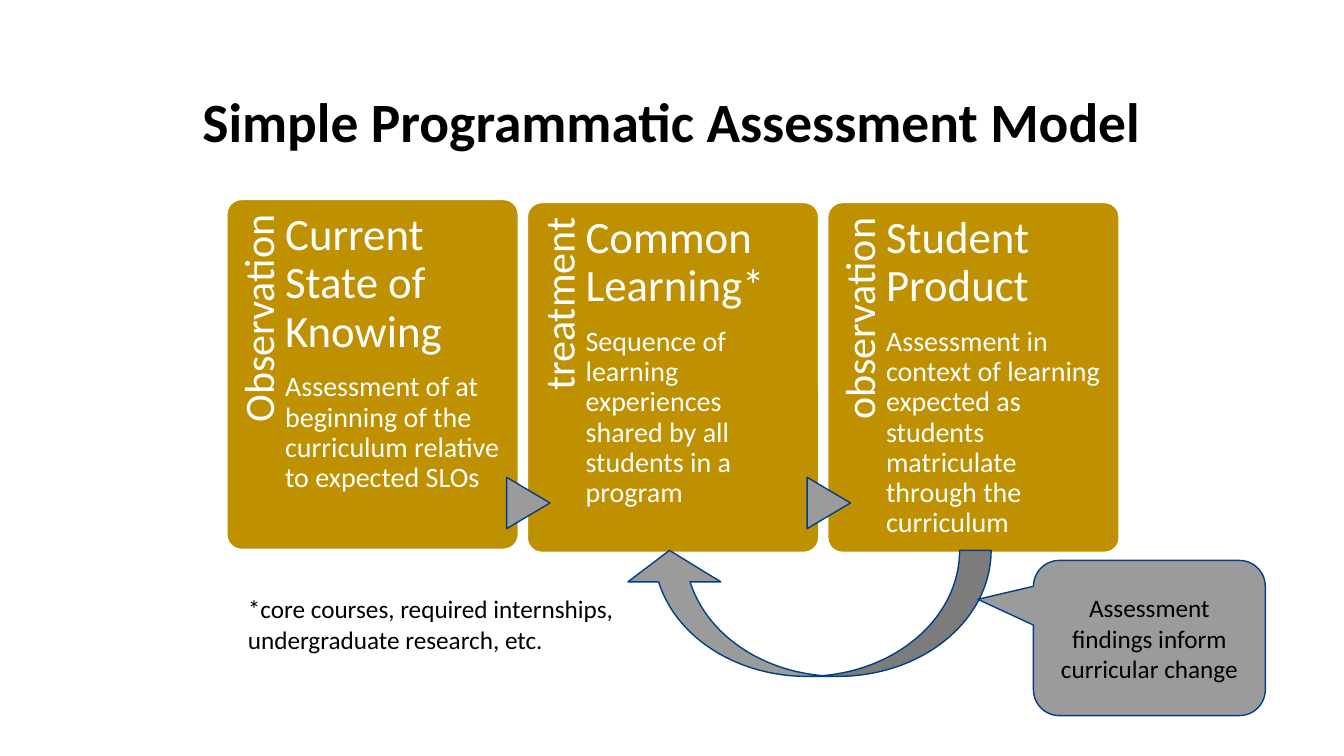
from pptx import Presentation
from pptx.dml.color import RGBColor
from pptx.enum.shapes import MSO_SHAPE as SHAPE
from pptx.enum.text import MSO_ANCHOR as ANCHOR, PP_ALIGN as ALIGN
from pptx.util import Inches, Pt

WHITE = RGBColor(0xFF, 0xFF, 0xFF)
BLACK = RGBColor(0, 0, 0)
GOLD = RGBColor(0xBF, 0x90, 0x00)
GRAY = RGBColor(0x9B, 0x9B, 0x9C)
NAVY = RGBColor(0x00, 0x3F, 0x87)

CARD_W, CARD_H, CARD_PITCH = 2.89, 3.47, 2.98
FIRST_LEFT = 2.25
CARDS = [
    (1.98, "Observation", "Current State of Knowing",
     "Assessment of at beginning of the curriculum relative to expected SLOs"),
    (2.01, "treatment", "Common Learning*",
     "Sequence of learning experiences shared by all students in a program"),
    (2.01, "observation", "Student Product",
     "Assessment in context of learning expected as students matriculate "
     "through the curriculum"),
]


def write(tf, *lines, color=BLACK, bold=None, align=ALIGN.LEFT, spacing=None,
          after=0, margins=(0.1, 0.05, 0.1, 0.05), anchor=ANCHOR.TOP):
    """Fill a text frame with (text, size) lines in one format."""
    tf.word_wrap = True
    tf.vertical_anchor = anchor
    (tf.margin_left, tf.margin_top,
     tf.margin_right, tf.margin_bottom) = map(Inches, margins)
    for i, (text, size) in enumerate(lines):
        p = tf.add_paragraph() if i else tf.paragraphs[0]
        p.alignment = align
        p.line_spacing = spacing
        p.space_before = Pt(0)
        p.space_after = Pt(size * after)
        r = p.add_run()
        r.text = text
        r.font.name = "Calibri"
        r.font.size = Pt(size)
        r.font.bold = bold
        r.font.color.rgb = color


def add_box(s, kind, box, fill=GRAY, line=NAVY, rotation=0, adjust=()):
    """Add a filled, outlined preset shape."""
    sp = s.shapes.add_shape(kind, *map(Inches, box))
    sp.shadow.inherit = False
    sp.fill.solid()
    sp.fill.fore_color.rgb = fill
    sp.line.color.rgb = line
    sp.line.width = Pt(1)
    sp.rotation = rotation
    for i, value in enumerate(adjust):
        sp.adjustments[i] = value
    return sp


def add_text(s, box, *lines, rotation=0, **fmt):
    """Add a text box."""
    sp = s.shapes.add_textbox(*map(Inches, box))
    sp.rotation = rotation
    write(sp.text_frame, *lines, **fmt)


def add_title(s, text, box):
    """Place and fill the title placeholder."""
    sp = s.shapes.title
    sp.left, sp.top, sp.width, sp.height = map(Inches, box)
    write(sp.text_frame, (text, 39.6), bold=True, align=ALIGN.CENTER,
          spacing=0.9, anchor=ANCHOR.BOTTOM)


def add_card(s, x, y, w, h, label, heading, body):
    """Draw a card with an upright label, a heading and body text."""
    add_box(s, SHAPE.ROUNDED_RECTANGLE, (x, y, w, h), GOLD, WHITE, adjust=[0.05])
    strip, length = 0.2 * w, 0.82 * h
    add_text(s, (x + (strip - length) / 2, y + (length - strip) / 2, length, strip),
             (label, 30), rotation=270, color=WHITE, align=ALIGN.RIGHT,
             spacing=0.9, after=0.35, margins=(0, 0.11, 0.15, 0))
    add_text(s, (x + strip, y, 0.75 * w, h), (heading, 32), (body, 20),
             color=WHITE, spacing=0.9, after=0.35, margins=(0, 0.12, 0, 0))


def add_step_arrow(s, x, y, w=0.51, h=0.43):
    """Draw a triangle pointing right, centred on the given point."""
    add_box(s, SHAPE.FLOWCHART_EXTRACT, (x - w / 2, y - h / 2, w, h), rotation=90)


def add_cards(s, x, y_arrow):
    """Lay out the row of cards and the arrows between them."""
    for i, (top, *texts) in enumerate(CARDS):
        left = x + i * CARD_PITCH
        add_card(s, left, top, CARD_W, CARD_H, *texts)
        if i:
            add_step_arrow(s, left + 0.01, y_arrow)


def add_feedback(s):
    """Draw the return arrow, its callout and the footnote."""
    add_box(s, SHAPE.CURVED_LEFT_ARROW, (7.38, 4.26, 1.25, 3.65), rotation=90,
            adjust=[0.25, 0.736, 0.25])
    callout = add_box(s, SHAPE.ROUNDED_RECTANGULAR_CALLOUT, (10.25, 5.56, 2.3, 1.54),
                      adjust=[-0.74, -0.249, 0.167])
    write(callout.text_frame, ("Assessment findings inform curricular change", 18),
          align=ALIGN.CENTER, anchor=ANCHOR.MIDDLE)
    add_text(s, (2.36, 5.84, 3.95, 0.71),
             ("*core courses, required internships, undergraduate research, etc.", 18))


def main():
    """Build and save the slide."""
    prs = Presentation()
    prs.slide_width, prs.slide_height = Inches(13.33), Inches(7.5)
    s = prs.slides.add_slide(prs.slide_layouts[5])
    add_title(s, "Simple Programmatic Assessment Model", (0.93, 0.31, 11.46, 1.27))
    add_cards(s, FIRST_LEFT, 4.99)
    add_feedback(s)
    prs.save("out.pptx")


if __name__ == "__main__":
    main()
